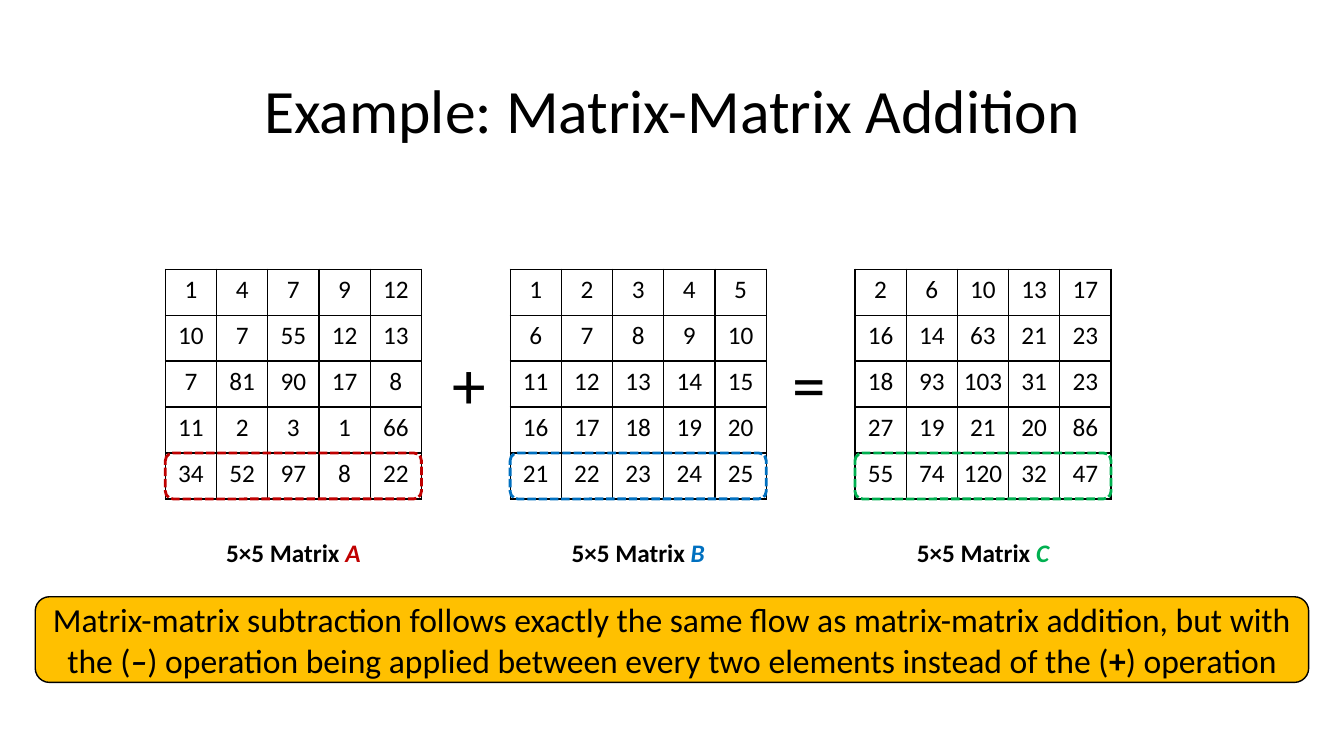
import pptx
import pptx.dml.color
import pptx.enum.dml
import pptx.enum.shapes
import pptx.enum.text
import pptx.oxml
import pptx.oxml.ns
import pptx.util

Inches = pptx.util.Inches
Pt = pptx.util.Pt
ALIGN = pptx.enum.text.PP_ALIGN
ANCHOR = pptx.enum.text.MSO_ANCHOR
AUTO_SIZE = pptx.enum.text.MSO_AUTO_SIZE
ROUNDED = pptx.enum.shapes.MSO_SHAPE.ROUNDED_RECTANGLE

FONT = "Calibri"
COLORS = {
    "ink": "000000",
    "A": "C00000",
    "B": "0070C0",
    "C": "00B050",
    "note": "FFC000",
}
MATRIX_A = [
    [1, 4, 7, 9, 12],
    [10, 7, 55, 12, 13],
    [7, 81, 90, 17, 8],
    [11, 2, 3, 1, 66],
    [34, 52, 97, 8, 22],
]
MATRIX_B = [[5 * row + col + 1 for col in range(5)] for row in range(5)]
MATRIX_C = [[a + b for a, b in zip(*rows)] for rows in zip(MATRIX_A, MATRIX_B)]

MATRIX_LEFT, MATRIX_TOP, MATRIX_PITCH = 1.64, 2.67, 3.42
MATRIX_WIDTH, MATRIX_HEIGHT = 2.54, 2.28


def rgb(name):
    return pptx.dml.color.RGBColor.from_string(COLORS[name])


def write_runs(paragraph, runs, size, align=ALIGN.CENTER):
    """Add (text, format values) runs; "color" in the values names a colour."""
    paragraph.alignment = align
    for text, values in runs:
        run = paragraph.add_run()
        run.text = text
        formats = {"name": FONT, "size": Pt(size), **values}
        run.font.color.rgb = rgb(formats.pop("color", "ink"))
        for attribute, value in formats.items():
            setattr(run.font, attribute, value)


def add_label(slide, box, runs, size):
    label = slide.shapes.add_textbox(*map(Inches, box)).text_frame
    label.word_wrap = False
    label.auto_size = AUTO_SIZE.SHAPE_TO_FIT_TEXT
    write_runs(label.paragraphs[0], runs, size)


def add_rounded_box(slide, box, line_color, line_width):
    rounded = slide.shapes.add_shape(ROUNDED, *map(Inches, box))
    rounded.shadow.inherit = False
    rounded.fill.background()
    rounded.line.color.rgb = rgb(line_color)
    rounded.line.width = Pt(line_width)
    return rounded


def add_borders(cell):
    properties = cell._tc.get_or_add_tcPr()
    for side in ("lnL", "lnR", "lnT", "lnB"):
        properties.append(pptx.oxml.parse_xml(
            f'<a:{side} {pptx.oxml.ns.nsdecls("a")} w="12700"><a:solidFill>'
            f'<a:srgbClr val="{COLORS["ink"]}"/></a:solidFill></a:{side}>'
        ))


def add_title(slide, box, text):
    title = slide.shapes.title
    title.left, title.top, title.width, title.height = map(Inches, box)
    title.text_frame.vertical_anchor = ANCHOR.MIDDLE
    heading = title.text_frame.paragraphs[0]
    heading.line_spacing = 0.9
    write_runs(heading, [(text, {})], 44)


def add_matrix(slide, box, name, values):
    """Draw the grid in the box, outline its last row and caption it below."""
    left, top, width, height = box
    row_height = height / len(values)
    grid = slide.shapes.add_table(
        len(values), len(values[0]), *map(Inches, box)).table
    grid.first_row = grid.horz_banding = False
    for column in grid.columns:
        column.width = Inches(width / len(values[0]))
    for row, numbers in zip(grid.rows, values):
        row.height = Inches(row_height)
        for cell, number in zip(row.cells, numbers):
            add_borders(cell)
            cell.fill.background()
            cell.margin_left = cell.margin_right = 0
            write_runs(cell.text_frame.paragraphs[0], [(str(number), {})], 18)

    last_row = (left, top + height - row_height, width, row_height)
    outline = add_rounded_box(slide, last_row, name, 2)
    outline.line.dash_style = pptx.enum.dml.MSO_LINE.SQUARE_DOT

    caption_width = 1.56
    add_label(
        slide,
        (left + (width - caption_width) / 2, top + height + 0.33, caption_width, 0.4),
        [("5×5 Matrix ", {"bold": True}),
         (name, {"bold": True, "italic": True, "color": name})],
        18,
    )


def add_note(slide, box):
    note = add_rounded_box(slide, box, "ink", 1)
    note.fill.solid()
    note.fill.fore_color.rgb = rgb("note")
    note.text_frame.word_wrap = True
    note.text_frame.vertical_anchor = ANCHOR.MIDDLE
    write_runs(note.text_frame.paragraphs[0], [
        ("Matrix-matrix subtraction follows exactly the same flow as "
         "matrix-matrix addition, but with the (", {}),
        ("–", {"bold": True, "italic": True}),
        (") operation being applied between every two elements "
         "instead of the (", {}),
        ("+", {"bold": True}),
        (") operation", {}),
    ], 24)


def add_addition_slide(deck):
    slide = deck.slides.add_slide(deck.slide_layouts.get_by_name("Title Only"))
    add_title(slide, (0.92, 0.4, 11.5, 1.45), "Example: Matrix-Matrix Addition")
    matrices = {"A": MATRIX_A, "B": MATRIX_B, "C": MATRIX_C}
    for index, (name, values) in enumerate(matrices.items()):
        left = MATRIX_LEFT + index * MATRIX_PITCH
        add_matrix(slide, (left, MATRIX_TOP, MATRIX_WIDTH, MATRIX_HEIGHT),
                   name, values)
    for left, operator in ((4.38, "+"), (7.76, "=")):
        add_label(slide, (left, 3.35, 0.54, 0.91), [(operator, {})], 48)
    add_note(slide, (0.35, 5.92, 12.63, 0.85))


def main():
    deck = pptx.Presentation()
    deck.slide_width, deck.slide_height = Inches(13.33), Inches(7.5)
    add_addition_slide(deck)
    deck.save("out.pptx")


if __name__ == "__main__":
    main()
